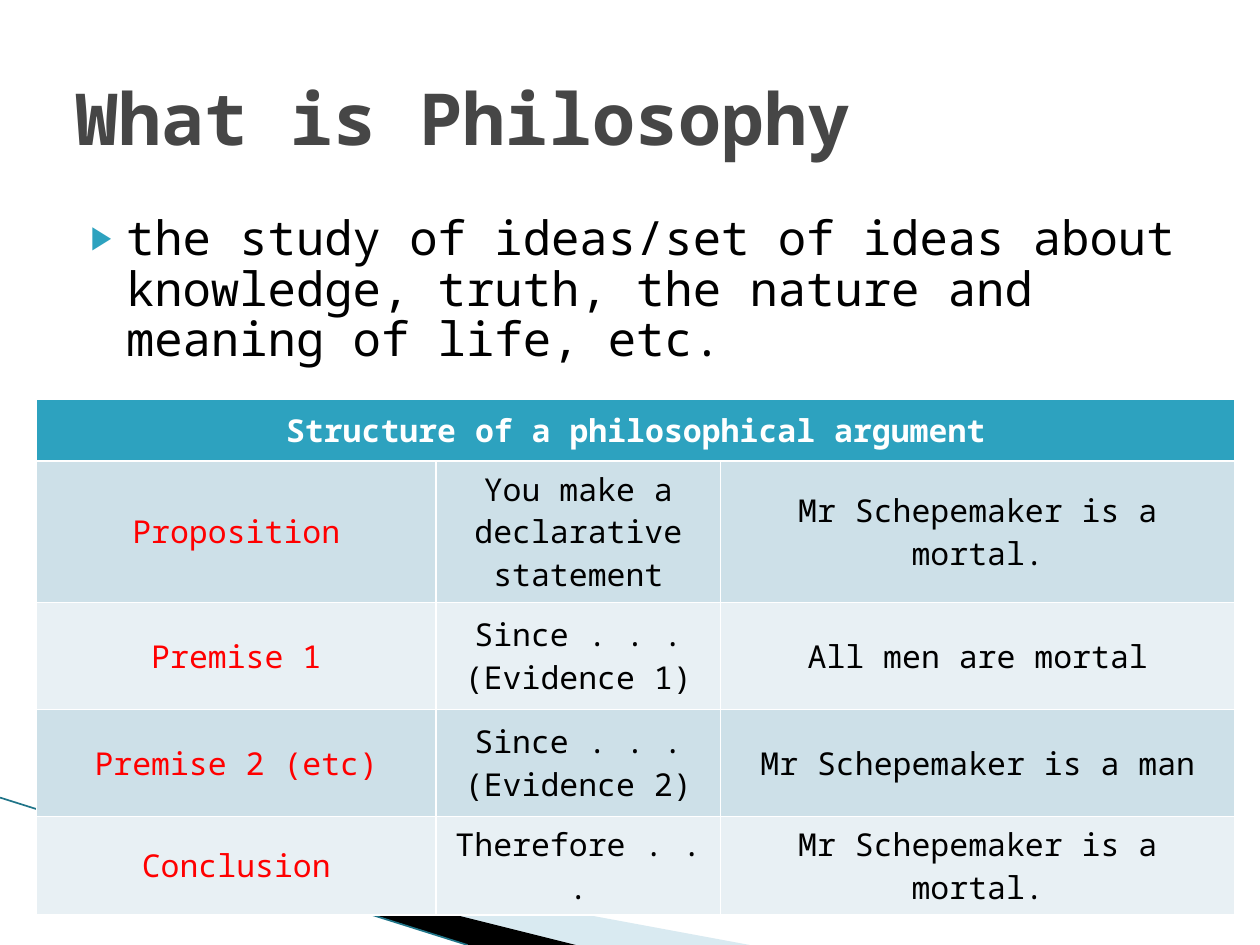
"""Build a slide defining philosophy, with a table on the structure of an argument."""
from dataclasses import dataclass

from lxml import etree
from pptx import Presentation
from pptx.dml.color import RGBColor
from pptx.enum.shapes import MSO_CONNECTOR
from pptx.enum.text import MSO_ANCHOR, MSO_AUTO_SIZE, PP_ALIGN
from pptx.oxml import parse_xml
from pptx.oxml.ns import nsdecls, qn
from pptx.util import Inches, Pt

LEFT, CENTER = PP_ALIGN.LEFT, PP_ALIGN.CENTER
TOP, MIDDLE = MSO_ANCHOR.TOP, MSO_ANCHOR.MIDDLE
NO_FIT = MSO_AUTO_SIZE.NONE
STRAIGHT = MSO_CONNECTOR.STRAIGHT


@dataclass(frozen=True)
class Theme:
    font: str = "Noto Sans Mono"
    title: str = "464646"
    text: str = "000000"
    accent: str = "2DA2BF"
    header: str = "FFFFFF"
    label: str = "FF0000"
    bands: tuple = ("CDE0E8", "E8F0F4")
    wedge: str = "A0CBDC"
    line: str = "1F7488"
    title_size: int = 41
    body_size: int = 27
    table_size: int = 18


theme = Theme()


def style(p, size, color, bold=False, align=LEFT):
    """Format a paragraph and its runs."""
    p.alignment = align
    for r in p.runs:
        r.font.name = theme.font
        r.font.size = Pt(size)
        r.font.bold = bold
        r.font.color.rgb = RGBColor.from_string(color)


prs = Presentation()
prs.slide_width, prs.slide_height = Inches(10), Inches(7.5)
s = prs.slides.add_slide(prs.slide_layouts[1])

wedges = [
    (theme.wedge, 40, [(0.55, 6.5), (5.95, 7.5), (4.56, 7.5)]),
    (theme.text, 100, [(0.53, 6.49), (4.57, 7.5), (3.72, 7.5)]),
]
for color, alpha, points in wedges:
    points = [(Inches(x), Inches(y)) for x, y in points]
    fb = s.shapes.build_freeform(*points[0])
    fb.add_line_segments(points[1:])
    sp = fb.convert_to_shape()
    sp.shadow.inherit = False
    sp.fill.solid()
    sp.fill.fore_color.rgb = RGBColor.from_string(color)
    sp.line.fill.background()
    if alpha < 100:
        clr = sp.fill._xPr.find(qn("a:solidFill"))[0]
        etree.SubElement(clr, qn("a:alpha")).set("val", str(alpha * 1000))

edge = s.shapes.add_connector(STRAIGHT, 0, Inches(6.33), Inches(3.71), Inches(7.5))
edge.line.color.rgb = RGBColor.from_string(theme.line)
edge.line.width = Pt(0.95)
etree.SubElement(edge._element.spPr, qn("a:effectLst"))

title = s.shapes.title
title.left, title.top, title.width, title.height = map(Inches, (0.5, 0.3, 9, 1.25))
tf = title.text_frame
tf.text = "What is Philosophy"
tf.auto_size = NO_FIT
tf.vertical_anchor = MIDDLE
style(tf.paragraphs[0], theme.title_size, theme.title, bold=True)

body = s.placeholders[1]
body.left, body.top, body.width, body.height = map(Inches, (0.5, 1.66, 9, 4.91))
tf = body.text_frame
tf.text = ("the study of ideas/set of ideas about knowledge, truth, "
           "the nature and meaning of life, etc.")
tf.auto_size = NO_FIT
tf.vertical_anchor = TOP
p = tf.paragraphs[0]
pPr = p._p.get_or_add_pPr()
pPr.set("marL", str(Inches(0.4)))
pPr.set("indent", str(Inches(-0.28)))
for tag in (f'<a:buClr {nsdecls("a")}><a:srgbClr val="{theme.accent}"/></a:buClr>',
            f'<a:buSzPct {nsdecls("a")} val="68000"/>',
            f'<a:buChar {nsdecls("a")} char="▶"/>'):
    pPr.append(parse_xml(tag))
p.space_before = Pt(0)
p.line_spacing = 0.89
style(p, theme.body_size, theme.text)

rows = [
    ("Structure of a philosophical argument", "", ""),
    ("Proposition", "You make a declarative statement", "Mr Schepemaker is a mortal."),
    ("Premise 1", "Since . . . (Evidence 1)", "All men are mortal"),
    ("Premise 2 (etc)", "Since . . . (Evidence 2)", "Mr Schepemaker is a man"),
    ("Conclusion", "Therefore . . .", "Mr Schepemaker is a mortal."),
]
widths = (3.17, 2.26, 4.08)
heights = (0.49, 1.1, 0.85, 0.85, 0.49)
tbl = s.shapes.add_table(len(rows), len(widths), Inches(0.29), Inches(3.17),
                         Inches(sum(widths)), Inches(sum(heights))).table
for col, width in zip(tbl.columns, widths):
    col.width = Inches(width)
for i, (row, height) in enumerate(zip(rows, heights)):
    tbl.rows[i].height = Inches(height)
    for j, text in enumerate(row):
        cell = tbl.cell(i, j)
        cell.text = text
        cell.vertical_anchor = MIDDLE
        cell.fill.solid()
        fill = theme.bands[(i - 1) % 2] if i else theme.accent
        cell.fill.fore_color.rgb = RGBColor.from_string(fill)
        color = theme.header if i == 0 else theme.text if j else theme.label
        style(cell.text_frame.paragraphs[0], theme.table_size, color, i == 0, CENTER)
tbl.cell(0, 0).merge(tbl.cell(0, 2))

prs.save("out.pptx")
